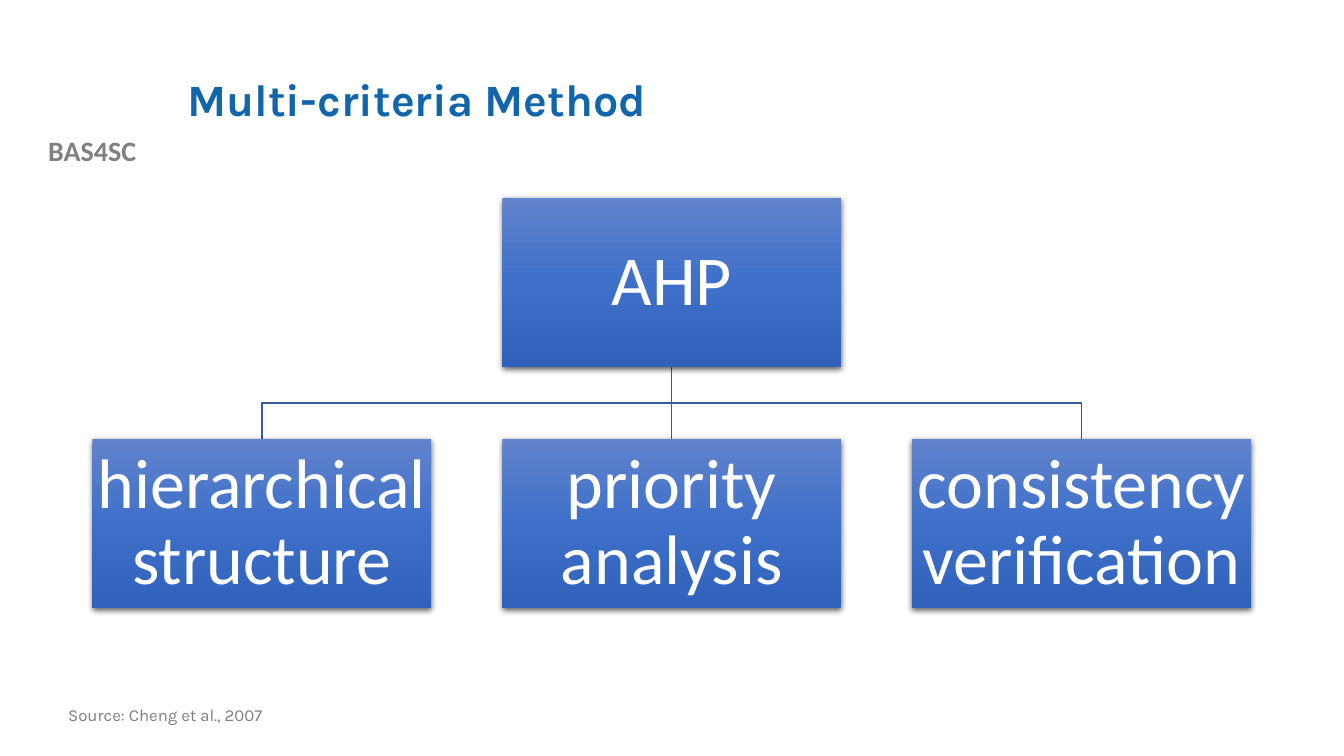
from lxml import etree
from pptx import Presentation
from pptx import util as u
from pptx.dml.color import RGBColor
from pptx.enum import shapes, text
from pptx.oxml.ns import qn


def colour(code):
    return RGBColor.from_string(code)


def write(frame, wording, size, font, code, bold=False, align=text.PP_ALIGN.LEFT, spacing=0.9):
    frame.word_wrap = True
    paragraph = frame.paragraphs[0]
    paragraph.alignment = align
    paragraph.line_spacing = spacing
    run = paragraph.add_run()
    run.text = wording
    run.font.size = u.Pt(size)
    run.font.name = font
    run.font.bold = bold
    run.font.color.rgb = colour(code)


deck = Presentation()
deck.slide_width = u.Cm(33.87)
deck.slide_height = u.Cm(19.05)
slide = deck.slides.add_slide(deck.slide_layouts[5])

project = slide.shapes.add_textbox(u.Cm(0), u.Cm(3.25), u.Cm(4.65), u.Cm(1.11))
write(project.text_frame, "BAS4SC", 20, "Calibri", "808080", True, text.PP_ALIGN.CENTER, 1.0)

heading = slide.shapes.title
heading.left, heading.top = u.Cm(4.47), u.Cm(1.02)
heading.width, heading.height = u.Cm(27.08), u.Cm(3.1)
heading.text_frame.vertical_anchor = text.MSO_ANCHOR.MIDDLE
write(heading.text_frame, "Multi-criteria Method", 32, "Karla", "1065AB", True)

source = slide.shapes.add_textbox(u.Cm(1.47), u.Cm(17.68), u.Cm(14.99), u.Cm(0.89))
write(source.text_frame, "Source: Cheng et al., 2007", 12, "Karla", "7F7F7F")

box_width, box_height = 8.54, 4.27
centre, pitch = 16.93, 10.33
method_top, step_top = 4.99, 11.06
method_bottom = method_top + box_height
fork = (method_bottom + step_top) / 2

trunk = slide.shapes.add_connector(
    shapes.MSO_CONNECTOR.STRAIGHT,
    u.Cm(centre), u.Cm(method_bottom), u.Cm(centre), u.Cm(step_top))
etree.SubElement(trunk._element.spPr, qn("a:effectLst"))
branches = [trunk]
for side in (-1, 1):
    end = centre + side * pitch
    outline = slide.shapes.build_freeform(u.Cm(centre), u.Cm(method_bottom))
    bends = [(centre, fork), (end, fork), (end, step_top)]
    outline.add_line_segments([(u.Cm(x), u.Cm(y)) for x, y in bends], close=False)
    branch = outline.convert_to_shape()
    branch.shadow.inherit = False
    branch.fill.background()
    branches.append(branch)
for branch in branches:
    branch.line.color.rgb = colour("365B9D")
    branch.line.width = u.Pt(1)

nodes = [
    ("AHP", 0, method_top),
    ("hierarchical structure", -1, step_top),
    ("priority analysis", 0, step_top),
    ("consistency verification", 1, step_top),
]
for label, column, top in nodes:
    node = slide.shapes.add_shape(
        shapes.MSO_SHAPE.RECTANGLE,
        u.Cm(centre + column * pitch - box_width / 2), u.Cm(top),
        u.Cm(box_width), u.Cm(box_height))
    node.line.fill.background()
    node.shadow.inherit = False

    node.fill.gradient()
    node.fill.gradient_angle = 270
    stops = node._element.spPr.find(qn("a:gradFill")).find(qn("a:gsLst"))
    for stop in list(stops):
        stops.remove(stop)
    for position, code in ((0, "6183CB"), (50, "3E70CA"), (100, "3062BB")):
        stop = etree.SubElement(stops, qn("a:gs"), pos=str(position * 1000))
        etree.SubElement(stop, qn("a:srgbClr"), val=code)

    effects = node._element.spPr.find(qn("a:effectLst"))
    shade = etree.SubElement(
        effects, qn("a:outerShdw"), blurRad=str(u.Pt(4.5)), dist=str(u.Pt(1.5)),
        dir="5400000", algn="ctr", rotWithShape="0")
    black = etree.SubElement(shade, qn("a:srgbClr"), val="000000")
    etree.SubElement(black, qn("a:alpha"), val="63000")

    frame = node.text_frame
    frame.margin_left = frame.margin_right = u.Cm(0.08)
    frame.margin_top = frame.margin_bottom = u.Cm(0.08)
    frame.vertical_anchor = text.MSO_ANCHOR.MIDDLE
    write(frame, label, 50, "Calibri", "FFFFFF", align=text.PP_ALIGN.CENTER)

deck.save("out.pptx")
